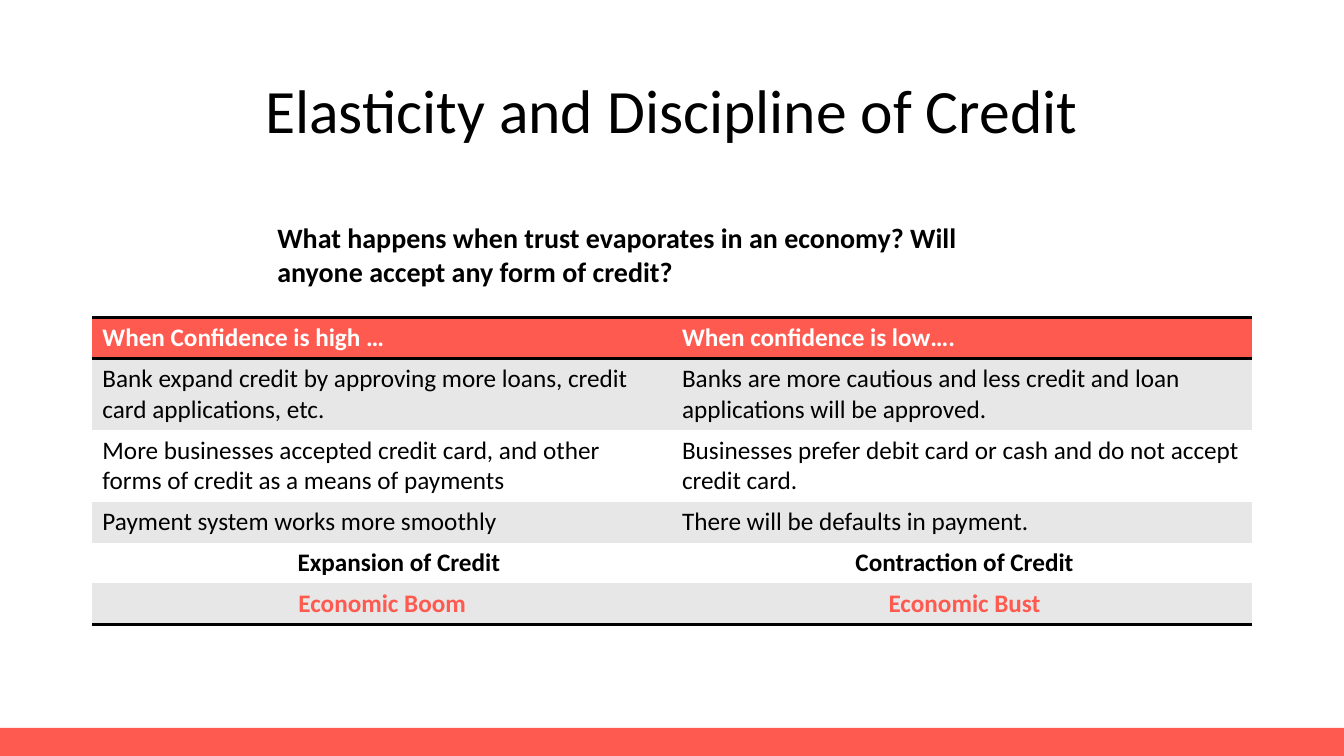
import dataclasses

import lxml.etree
import pptx
import pptx.dml.color
import pptx.enum.shapes
import pptx.enum.text
import pptx.oxml.ns
import pptx.util

Pt = pptx.util.Pt
ALIGN = pptx.enum.text.PP_ALIGN
ANCHOR = pptx.enum.text.MSO_ANCHOR
PLAIN_TABLE_STYLE = "{2D5ABB26-0587-4C30-8999-92F81FD0307C}"


@dataclasses.dataclass(frozen=True)
class Theme:
    font: str = "Calibri"
    accent: str = "FF5A50"
    ink: str = "000000"
    paper: str = "FFFFFF"
    band: str = "E7E7E7"
    title_size: int = 44
    question_size: int = 20
    table_size: int = 18


@dataclasses.dataclass(frozen=True)
class Box:
    left: float
    top: float
    width: float
    height: float

    def lengths(self):
        return [Pt(value) for value in dataclasses.astuple(self)]


THEME = Theme()
PAGE = Box(0, 0, 960, 540)

HEADINGS = ("When Confidence is high …", "When confidence is low….")
EFFECTS = (
    ("Bank expand credit by approving more loans, credit card applications, etc.",
     "Banks are more cautious and less credit and loan applications will be approved."),
    ("More businesses accepted credit card, and other forms of credit as a means of payments",
     "Businesses prefer debit card or cash and do not accept credit card."),
    ("Payment system works more smoothly", "There will be defaults in payment."),
)
CREDIT = ("Expansion of Credit", "Contraction of Credit")
ECONOMY = ("Economic Boom", "Economic Bust")


def colour(code):
    return pptx.dml.color.RGBColor.from_string(code)


def write(frame, text, *, size, ink=THEME.ink, bold=False, align=ALIGN.LEFT, spacing=1.0):
    para = frame.paragraphs[0]
    para.alignment = align
    para.line_spacing = spacing
    span = para.add_run()
    span.text = text
    span.font.name = THEME.font
    span.font.size = Pt(size)
    span.font.bold = bold
    span.font.color.rgb = colour(ink)


def add_rule(cell, side):
    """Draw a 2 pt line on the top (lnT) or bottom (lnB) of a cell."""
    properties = cell._tc.get_or_add_tcPr()
    line = lxml.etree.SubElement(properties, pptx.oxml.ns.qn("a:" + side), w=str(Pt(2)))
    fill = lxml.etree.SubElement(line, pptx.oxml.ns.qn("a:solidFill"))
    lxml.etree.SubElement(fill, pptx.oxml.ns.qn("a:srgbClr"), val=THEME.ink)


def add_footer_band(page, box):
    band = page.shapes.add_shape(pptx.enum.shapes.MSO_SHAPE.RECTANGLE, *box.lengths())
    band.shadow.inherit = False
    band.fill.solid()
    band.fill.fore_color.rgb = colour(THEME.accent)
    band.line.fill.background()


def add_title(page, box):
    title = page.shapes.title
    title.left, title.top, title.width, title.height = box.lengths()
    title.text_frame.vertical_anchor = ANCHOR.MIDDLE
    write(title.text_frame, "Elasticity and Discipline of Credit",
          size=THEME.title_size, align=ALIGN.CENTER, spacing=0.9)


def add_question(page, box):
    frame = page.shapes.add_textbox(*box.lengths()).text_frame
    frame.word_wrap = True
    frame.auto_size = pptx.enum.text.MSO_AUTO_SIZE.SHAPE_TO_FIT_TEXT
    write(frame, "What happens when trust evaporates in an economy? "
          "Will anyone accept any form of credit?", size=THEME.question_size, bold=True)


def add_comparison(page, box):
    centred = {"bold": True, "align": ALIGN.CENTER}
    # Each row: texts, height, extra left margins, text format
    rows = [(HEADINGS, 29.2, (0, 0), {"bold": True, "ink": THEME.paper})]
    rows += [(texts, height, (0, 0), {})
             for texts, height in zip(EFFECTS, (51, 51, 29.2))]
    rows += [(CREDIT, 29.2, (24, 4), centred),
             (ECONOMY, 29.2, (0, 4), {**centred, "ink": THEME.accent})]

    holder = page.shapes.add_table(len(rows), len(HEADINGS), *box.lengths())
    table = holder.table
    table.first_row = table.horz_banding = False
    for style in holder.element.iter(pptx.oxml.ns.qn("a:tableStyleId")):
        style.text = PLAIN_TABLE_STYLE
    for column in table.columns:
        column.width = Pt(box.width / len(HEADINGS))

    for row, (texts, height, indents, look) in enumerate(rows):
        table.rows[row].height = Pt(height)
        shade = THEME.band if row % 2 else THEME.paper
        for column, (text, indent) in enumerate(zip(texts, indents)):
            cell = table.cell(row, column)
            cell.margin_left = Pt(7.2 + indent)
            if row == 0:
                add_rule(cell, "lnT")
            if row in (0, len(rows) - 1):
                add_rule(cell, "lnB")
            cell.fill.solid()
            cell.fill.fore_color.rgb = colour(shade if row else THEME.accent)
            write(cell.text_frame, text, size=THEME.table_size, **look)


def build_credit_page(deck, box):
    page = deck.slides.add_slide(deck.slide_layouts[5])
    page.background.fill.solid()
    page.background.fill.fore_color.rgb = colour(THEME.paper)
    margin = 66
    inner = box.width - 2 * margin
    add_footer_band(page, Box(box.left, box.top + box.height - 20, box.width, 20))
    add_title(page, Box(box.left + margin, box.top + 28.75, inner, 104.4))
    add_comparison(page, Box(box.left + margin, box.top + 226.8, inner, 218.8))
    add_question(page, Box(box.left + 191, box.top + 154.2, 511, 55.7))


def main():
    deck = pptx.Presentation()
    deck.slide_width, deck.slide_height = Pt(PAGE.width), Pt(PAGE.height)
    build_credit_page(deck, PAGE)
    deck.save("out.pptx")


if __name__ == "__main__":
    main()
